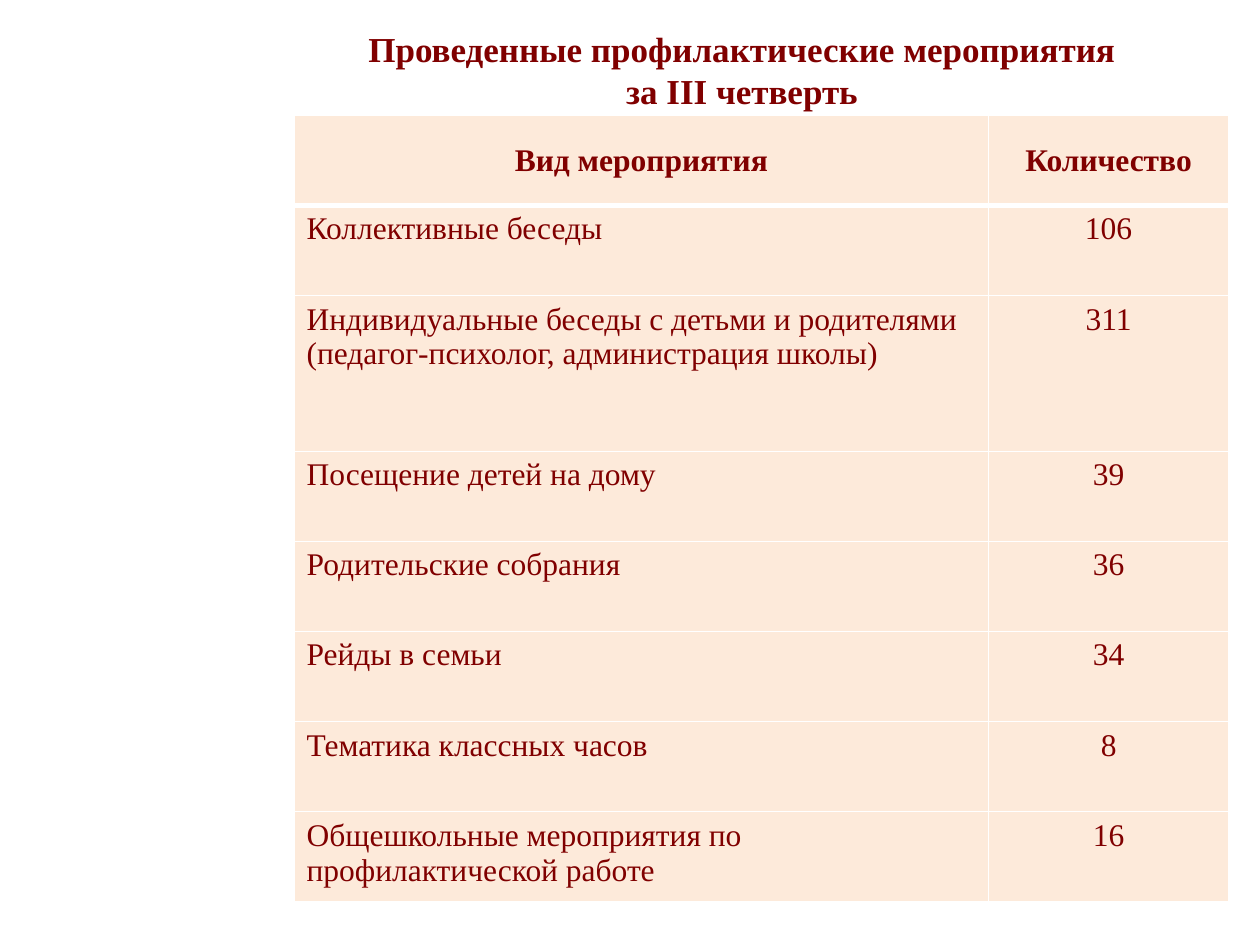
from pptx import Presentation
from pptx.dml.color import RGBColor
from pptx.enum.text import MSO_ANCHOR, PP_ALIGN
from pptx.oxml import parse_xml
from pptx.oxml.ns import nsdecls
from pptx.util import Pt

CENTER, LEFT = PP_ALIGN.CENTER, PP_ALIGN.LEFT
MIDDLE, TOP = MSO_ANCHOR.MIDDLE, MSO_ANCHOR.TOP
FONT, DARK, PEACH, WHITE = "Times New Roman", "800000", "FDEADA", "FFFFFF"

TITLE = ["Проведенные профилактические мероприятия", "за III четверть"]
ROWS = [
    ("Вид мероприятия", "Количество"),
    ("Коллективные беседы", "106"),
    ("Индивидуальные беседы с детьми и родителями "
     "(педагог-психолог, администрация школы)", "311"),
    ("Посещение детей на дому", "39"),
    ("Родительские собрания", "36"),
    ("Рейды в семьи", "34"),
    ("Тематика классных часов", "8"),
    ("Общешкольные мероприятия по профилактической работе", "16"),
]
COLS = [397, 137]
ROW_H, TALL_H, TALL = 51.5, 89, 2
HEIGHTS = [TALL_H if i == TALL else ROW_H for i in range(len(ROWS))]


def color(code):
    return RGBColor.from_string(code)


def write(para, text, size, bold, align):
    para.alignment = align
    run = para.add_run()
    run.text = text
    font = run.font
    font.name, font.size, font.bold = FONT, Pt(size), bold
    font.color.rgb = color(DARK)


def border(cell, side, width):
    cell._tc.get_or_add_tcPr().append(parse_xml(
        f'<a:ln{side} {nsdecls("a")} w="{Pt(width)}"><a:solidFill>'
        f'<a:srgbClr val="{WHITE}"/></a:solidFill></a:ln{side}>'))


prs = Presentation()
prs.slide_width, prs.slide_height = Pt(720), Pt(540)
slide = prs.slides.add_slide(prs.slide_layouts[6])

# Title, first line set slightly left of centre
box = slide.shapes.add_textbox(Pt(168), Pt(12), Pt(522), Pt(55.5))
frame = box.text_frame
frame.word_wrap = True
for i, line in enumerate(TITLE):
    para = frame.add_paragraph() if i else frame.paragraphs[0]
    write(para, line, 20, True, CENTER)
frame.paragraphs[0]._p.get_or_add_pPr().set("marR", str(Pt(10)))

# Table of events
table = slide.shapes.add_table(
    len(ROWS), len(COLS), Pt(168), Pt(66), Pt(sum(COLS)), Pt(sum(HEIGHTS))).table
table.horz_banding = False
for col, width in zip(table.columns, COLS):
    col.width = Pt(width)
for r, (row, height) in enumerate(zip(ROWS, HEIGHTS)):
    table.rows[r].height = Pt(height)
    head = r == 0
    for c, text in enumerate(row):
        cell = table.cell(r, c)
        for side in "LRTB":
            thick = head and side == "B" or r == 1 and side == "T"
            border(cell, side, 3 if thick else 1)
        cell.fill.solid()
        cell.fill.fore_color.rgb = color(PEACH)
        cell.vertical_anchor = MIDDLE if head else TOP
        write(cell.text_frame.paragraphs[0], text, 18, head,
              CENTER if head or c else LEFT)

prs.save("out.pptx")
